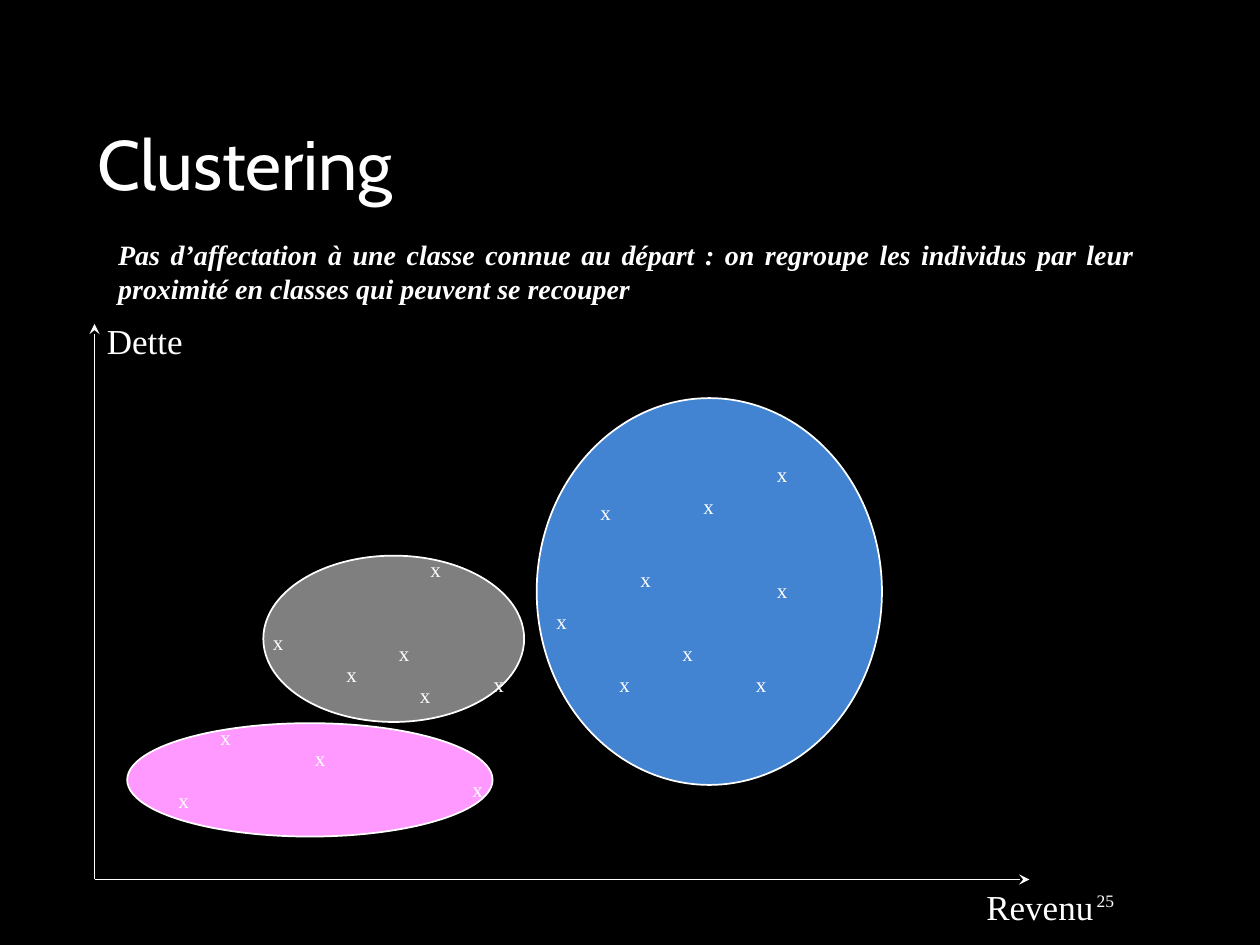
from dataclasses import dataclass

from lxml.etree import SubElement
from pptx import Presentation
from pptx.dml.color import RGBColor
from pptx.enum.shapes import MSO_CONNECTOR, MSO_SHAPE
from pptx.enum.text import MSO_ANCHOR, MSO_AUTO_SIZE, PP_ALIGN
from pptx.oxml.ns import qn
from pptx.slide import Slide
from pptx.text.text import TextFrame
from pptx.util import Inches, Pt

WIDTH, HEIGHT = Inches(10), Inches(7.5)
COLUMNS, ROWS = 120, 90
WHITE = RGBColor(0xFF, 0xFF, 0xFF)
BLACK = RGBColor(0x00, 0x00, 0x00)
PINK = RGBColor(0xFF, 0x99, 0xFF)
GREY = RGBColor(0x7F, 0x7F, 0x7F)
BLUE = RGBColor(0x42, 0x83, 0xD2)
SERIF = "Times New Roman"


@dataclass(frozen=True)
class Area:
    left: float
    top: float
    width: float
    height: float

    def emu(self) -> tuple[int, int, int, int]:
        return (across(self.left), down(self.top),
                across(self.width), down(self.height))


@dataclass(frozen=True)
class Cluster:
    area: Area
    color: RGBColor
    members: tuple[tuple[float, float], ...]


def across(percent: float) -> int:
    return round(WIDTH * percent / 100)


def down(percent: float) -> int:
    return round(HEIGHT * percent / 100)


def write(frame: TextFrame, text: str, *, size: float, font: str = SERIF,
          align: PP_ALIGN = PP_ALIGN.LEFT, anchor: MSO_ANCHOR = MSO_ANCHOR.TOP,
          wrap: bool = False, emphasis: bool = False,
          spacing: float = 1.0) -> None:
    frame.auto_size = MSO_AUTO_SIZE.NONE
    frame.word_wrap = wrap
    frame.vertical_anchor = anchor
    paragraph = frame.paragraphs[0]
    paragraph.alignment = align
    paragraph.line_spacing = spacing
    run = paragraph.add_run()
    run.text = text
    run.font.name = font
    run.font.size = Pt(size)
    run.font.bold = run.font.italic = emphasis
    run.font.color.rgb = WHITE


def add_label(slide: Slide, area: Area, text: str, **style) -> None:
    write(slide.shapes.add_textbox(*area.emu()).text_frame, text, **style)


def draw_ellipse(slide: Slide, cluster: Cluster) -> None:
    ellipse = slide.shapes.add_shape(MSO_SHAPE.OVAL, *cluster.area.emu())
    ellipse.shadow.inherit = False
    ellipse.fill.solid()
    ellipse.fill.fore_color.rgb = cluster.color
    ellipse.line.color.rgb = WHITE
    ellipse.line.width = Pt(1)


def draw_members(slide: Slide, cluster: Cluster) -> None:
    for column, row in cluster.members:
        area = Area((column - 0.2) / COLUMNS * 100, (row + 0.4) / ROWS * 100,
                    2.8, 4)
        add_label(slide, area, "x", size=12)


def draw_axis(slide: Slide, origin: tuple[float, float],
              tip: tuple[float, float]) -> None:
    axis = slide.shapes.add_connector(
        MSO_CONNECTOR.STRAIGHT, across(origin[0]), down(origin[1]),
        across(tip[0]), down(tip[1]))
    axis.line.color.rgb = WHITE
    axis.line.width = Pt(1)
    SubElement(axis.line._get_or_add_ln(), qn("a:tailEnd"), type="stealth")
    SubElement(axis._element.spPr, qn("a:effectLst"))


CLUSTERS = (
    Cluster(Area(10.1, 76.53, 29, 12), PINK,
            ((16, 74), (20, 68), (29, 70), (44, 73))),
    Cluster(Area(20.9, 58.8, 20.7, 17.6), GREY,
            ((25, 59), (32, 62), (37, 60), (39, 64), (40, 52), (46, 63))),
    Cluster(Area(42.6, 42.13, 27.4, 40.93), BLUE,
            ((56.2, 46.6), (52, 57), (58, 63), (60, 53), (64, 60), (66, 46),
             (71, 63), (73, 43), (73, 54))),
)
ORIGIN = (7.5, 93.07)
AXIS_TIPS = ((7.5, 34.27), (81.7, 93.07))


def main() -> None:
    deck = Presentation()
    deck.slide_width, deck.slide_height = WIDTH, HEIGHT
    slide = deck.slides.add_slide(deck.slide_layouts[5])
    slide.background.fill.solid()
    slide.background.fill.fore_color.rgb = BLACK

    title = slide.shapes.title
    title.left, title.top, title.width, title.height = Area(
        6.7, 5.6, 86.6, 16.67).emu()
    write(title.text_frame, "Clustering", size=40, font="Cabin",
          anchor=MSO_ANCHOR.BOTTOM, wrap=True, spacing=0.8)
    add_label(slide, Area(79.4, 93.33, 10, 4), "25", size=10,
              align=PP_ALIGN.RIGHT, anchor=MSO_ANCHOR.MIDDLE, wrap=True)

    for cluster in CLUSTERS:
        draw_ellipse(slide, cluster)
    for tip in AXIS_TIPS:
        draw_axis(slide, ORIGIN, tip)
    for cluster in CLUSTERS:
        draw_members(slide, cluster)

    add_label(slide, Area(77.3, 93.07, 10.6, 5.87), "Revenu", size=20)
    add_label(slide, Area(7.5, 33.2, 8.1, 5.87), "Dette", size=20)
    add_label(slide, Area(8.4, 24.53, 82.6, 8.53),
              "Pas d’affectation à une classe connue au départ : on regroupe "
              "les individus par leur proximité en classes qui peuvent se "
              "recouper",
              size=16, align=PP_ALIGN.JUSTIFY, wrap=True, emphasis=True)
    deck.save("out.pptx")


if __name__ == "__main__":
    main()
